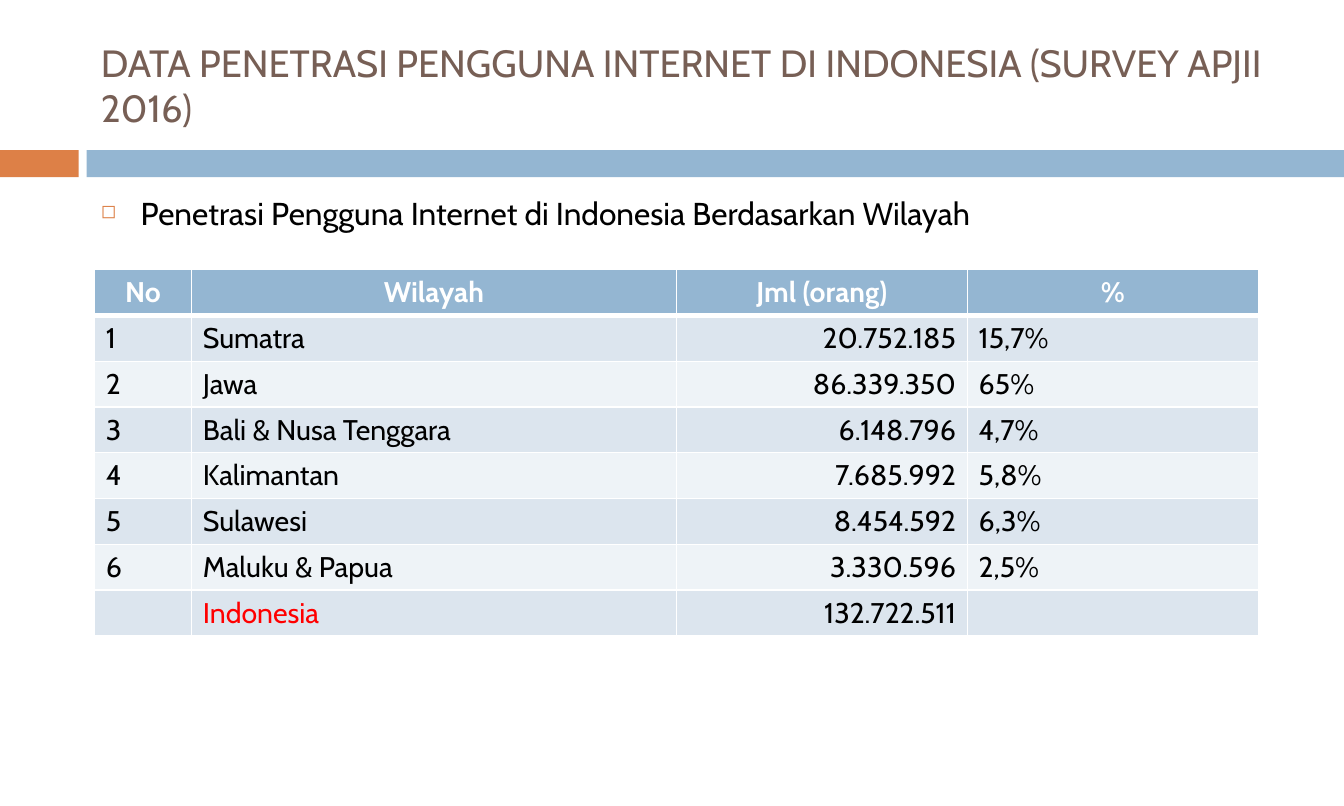
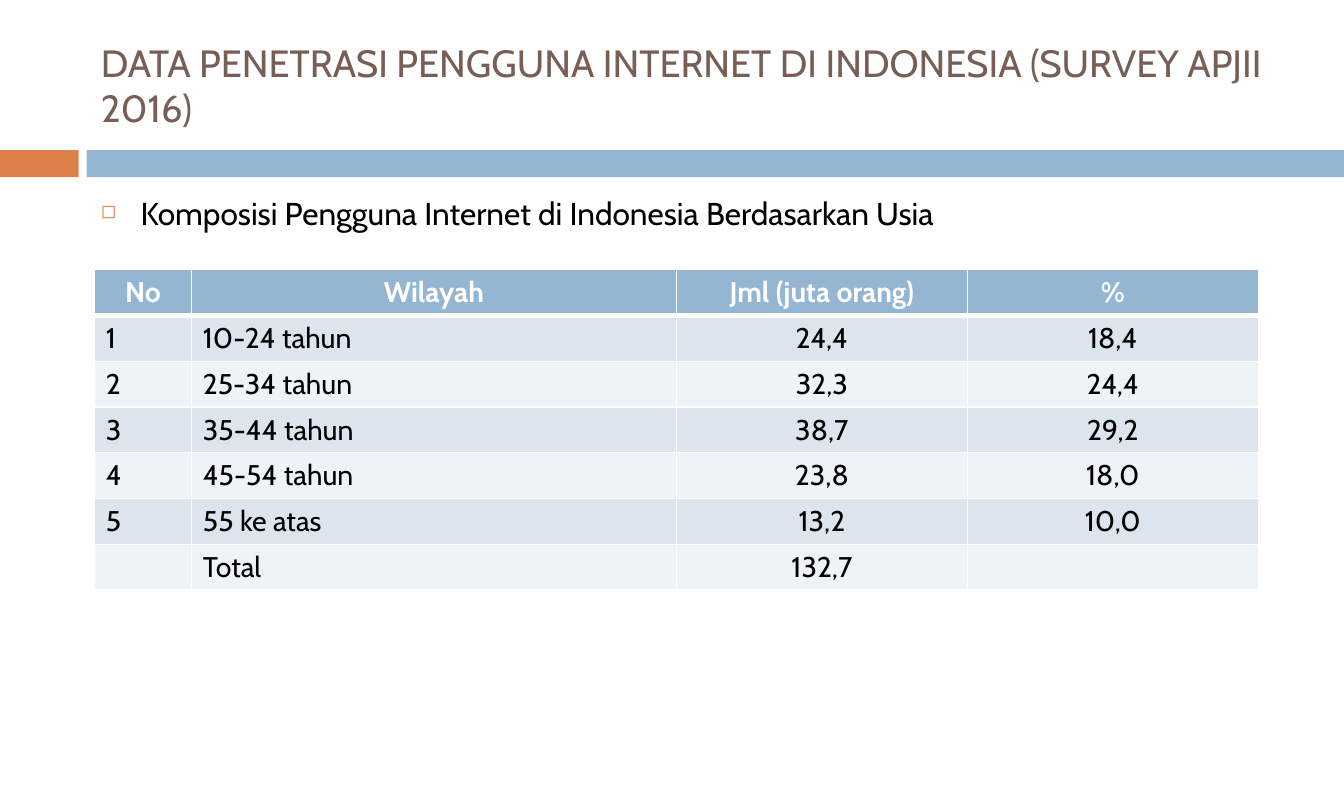
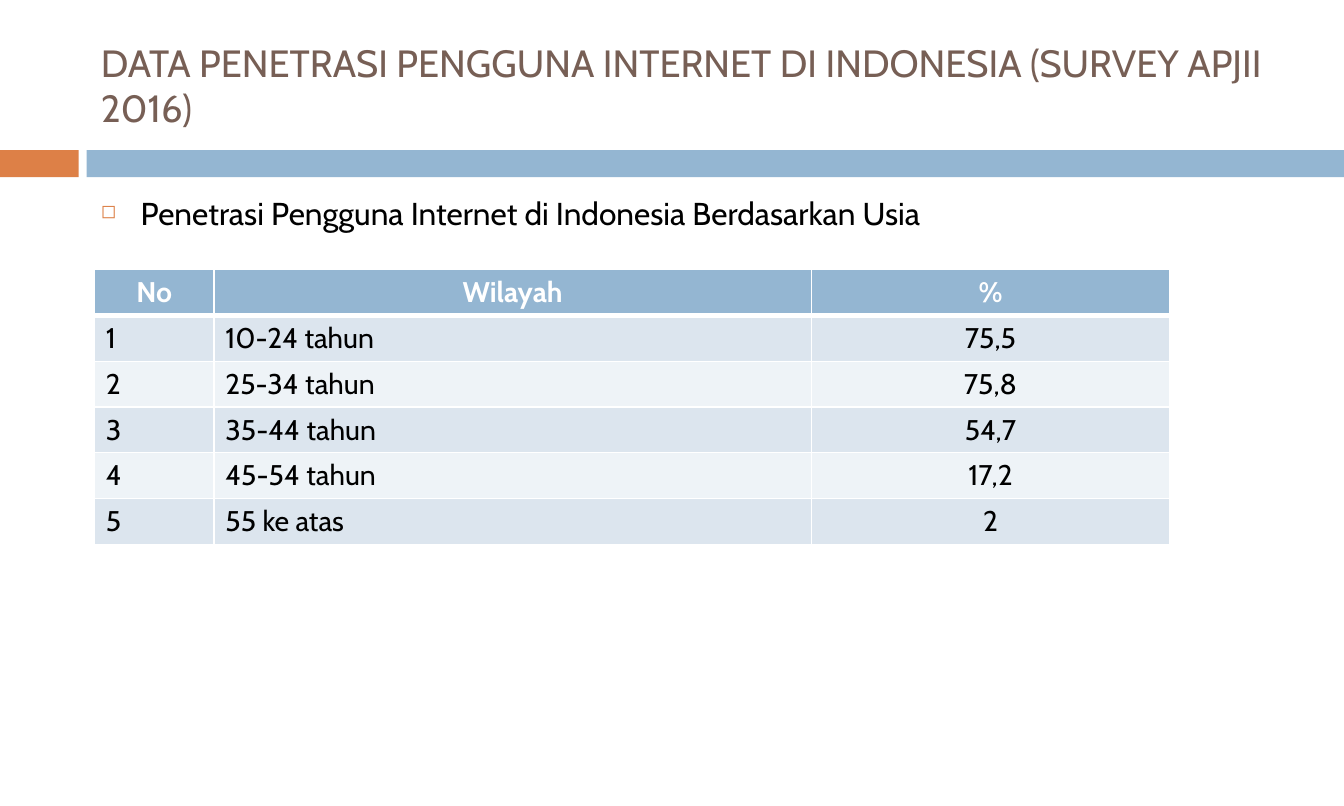
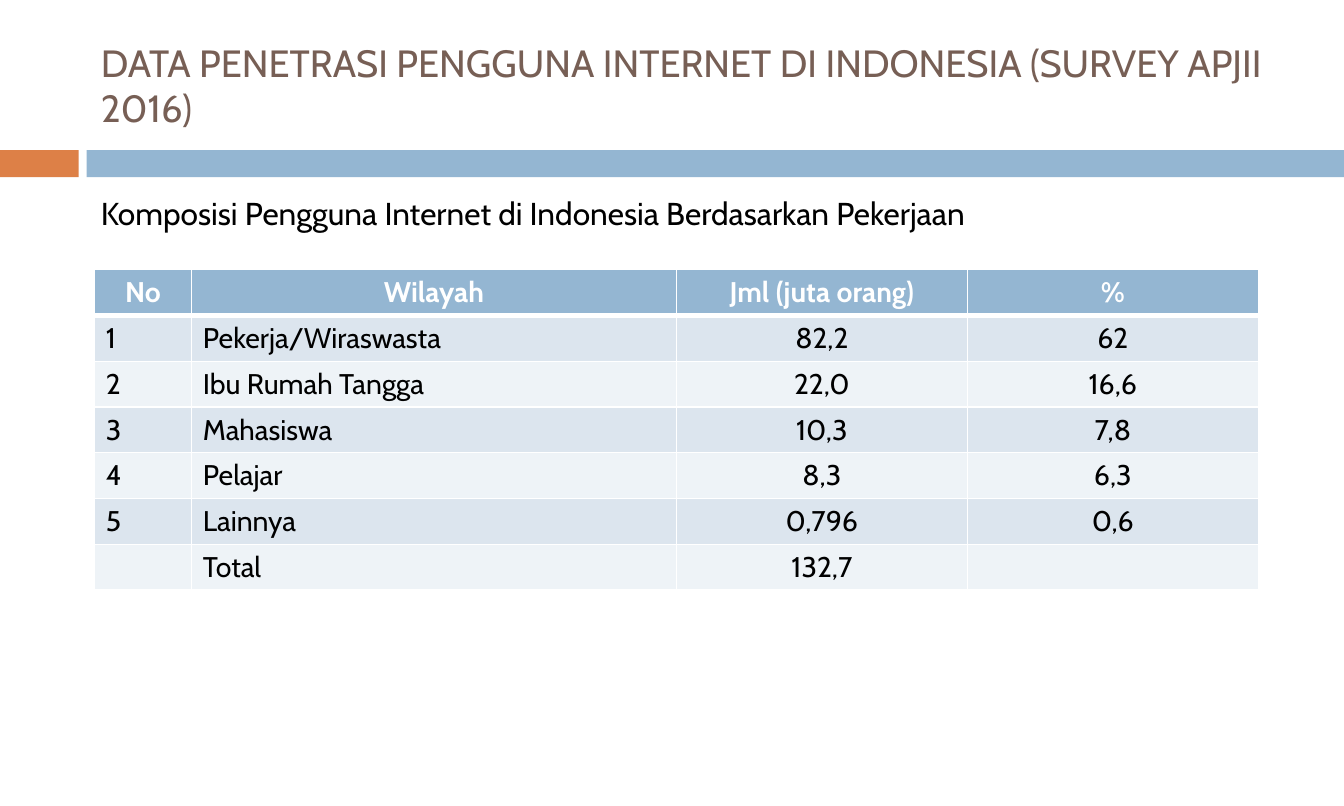
from lxml import etree
from pptx import Presentation
from pptx.dml.color import RGBColor
from pptx.enum.shapes import MSO_SHAPE
from pptx.enum.text import MSO_ANCHOR, PP_ALIGN
from pptx.oxml.ns import qn
from pptx.util import Pt

PX = 8000
SLIDE_WIDTH, SLIDE_HEIGHT = 1350, 810

RECTANGLE = MSO_SHAPE.RECTANGLE
MIDDLE, TOP = MSO_ANCHOR.MIDDLE, MSO_ANCHOR.TOP
ALIGNMENTS = {"l": PP_ALIGN.LEFT, "c": PP_ALIGN.CENTER, "r": PP_ALIGN.RIGHT}

FONT = "Cabin"
BROWN, ORANGE, BLUE = "775F55", "DD8047", "94B6D2"
BLACK, WHITE, RED = "000000", "FFFFFF", "FF0000"
STRIPES = ["DCE5EE", "EEF3F7"]

TITLE = "DATA PENETRASI PENGGUNA INTERNET DI INDONESIA (SURVEY APJII 2016)"
TITLE_PLACE = (90, 27, 1204, 117)
BODY_PLACE = (90, 189, 1204, 532)
BANDS = [(0, 79, ORANGE), (87, SLIDE_WIDTH - 87, BLUE)]
BAND_TOP, BAND_HEIGHT = 151, 27
BULLET_INDENT = 40

TABLE_LEFT, TABLE_TOP, ROW_HEIGHT = 95, 271, 46
COLUMN_PARTS = {"No": 1, "Wilayah": 5, "Jml (orang)": 3, "Jml (juta orang)": 3, "%": 3}
HIGHLIGHTS = {"Indonesia": RED}

PAGES = [
    {
        "heading": "Penetrasi Pengguna Internet di Indonesia Berdasarkan Wilayah",
        "bullet": True, "width": 1169, "align": "llrl",
        "rows": [
            ("No", "Wilayah", "Jml (orang)", "%"),
            ("1", "Sumatra", "20.752.185", "15,7%"),
            ("2", "Jawa", "86.339.350", "65%"),
            ("3", "Bali & Nusa Tenggara", "6.148.796", "4,7%"),
            ("4", "Kalimantan", "7.685.992", "5,8%"),
            ("5", "Sulawesi", "8.454.592", "6,3%"),
            ("6", "Maluku & Papua", "3.330.596", "2,5%"),
            ("", "Indonesia", "132.722.511", ""),
        ],
    },
    {
        "heading": "Komposisi Pengguna Internet di Indonesia Berdasarkan Usia",
        "bullet": True, "width": 1169, "align": "llcc",
        "rows": [
            ("No", "Wilayah", "Jml (juta orang)", "%"),
            ("1", "10-24 tahun", "24,4", "18,4"),
            ("2", "25-34 tahun", "32,3", "24,4"),
            ("3", "35-44 tahun", "38,7", "29,2"),
            ("4", "45-54 tahun", "23,8", "18,0"),
            ("5", "55 ke atas", "13,2", "10,0"),
            ("", "Total", "132,7", ""),
        ],
    },
    {
        "heading": "Penetrasi Pengguna Internet di Indonesia Berdasarkan Usia",
        "bullet": True, "width": 1080, "align": "llc",
        "rows": [
            ("No", "Wilayah", "%"),
            ("1", "10-24 tahun", "75,5"),
            ("2", "25-34 tahun", "75,8"),
            ("3", "35-44 tahun", "54,7"),
            ("4", "45-54 tahun", "17,2"),
            ("5", "55 ke atas", "2"),
        ],
    },
    {
        "heading": "Komposisi Pengguna Internet di Indonesia Berdasarkan Pekerjaan",
        "bullet": False, "width": 1169, "align": "llcc",
        "rows": [
            ("No", "Wilayah", "Jml (juta orang)", "%"),
            ("1", "Pekerja/Wiraswasta", "82,2", "62"),
            ("2", "Ibu Rumah Tangga", "22,0", "16,6"),
            ("3", "Mahasiswa", "10,3", "7,8"),
            ("4", "Pelajar", "8,3", "6,3"),
            ("5", "Lainnya", "0,796", "0,6"),
            ("", "Total", "132,7", ""),
        ],
    },
]


def px(*lengths):
    return [round(length * PX) for length in lengths]


def paint(fill, colour):
    fill.solid()
    fill.fore_color.rgb = RGBColor.from_string(colour)


def write(text_frame, text, size, colour, bold=False):
    """Set one paragraph of text, format it and return the paragraph."""
    text_frame.text = text
    paragraph = text_frame.paragraphs[0]
    for span in paragraph.runs:
        span.font.name = FONT
        span.font.size = Pt(size)
        span.font.bold = bold
        span.font.color.rgb = RGBColor.from_string(colour)
    return paragraph


def add_text(page, place, text, size, colour, anchor):
    text_frame = page.shapes.add_textbox(*px(*place)).text_frame
    text_frame.word_wrap = True
    text_frame.vertical_anchor = anchor
    return write(text_frame, text, size, colour)


def add_frame(page):
    """Draw the title and the bands that every slide shares."""
    for left, width, colour in BANDS:
        band = page.shapes.add_shape(RECTANGLE, *px(left, BAND_TOP, width, BAND_HEIGHT))
        band.shadow.inherit = False
        paint(band.fill, colour)
        band.line.fill.background()
    add_text(page, TITLE_PLACE, TITLE, 24, BROWN, MIDDLE)


def add_heading(page, text, bullet):
    paragraph = add_text(page, BODY_PLACE, text, 20, BLACK, TOP)
    paragraph.space_before = Pt(7)
    properties = paragraph._p.get_or_add_pPr()
    indent, = px(BULLET_INDENT)
    properties.set("marL", str(indent))
    properties.set("indent", str(-indent))
    if bullet:
        colour = etree.SubElement(properties, qn("a:buClr"))
        etree.SubElement(colour, qn("a:srgbClr"), val=ORANGE)
        etree.SubElement(properties, qn("a:buSzPct"), val="60000")
        etree.SubElement(properties, qn("a:buChar"), char="◻")
    else:
        etree.SubElement(properties, qn("a:buNone"))


def set_borders(cell, top, bottom):
    """Give a cell white borders; top and bottom are widths in points."""
    properties = cell._tc.get_or_add_tcPr()
    for side, width in (("L", 1), ("R", 1), ("T", top), ("B", bottom)):
        line = etree.SubElement(properties, qn("a:ln" + side), w=str(Pt(width)))
        fill = etree.SubElement(line, qn("a:solidFill"))
        etree.SubElement(fill, qn("a:srgbClr"), val=WHITE)


def add_data_table(page, rows, width, align):
    header = rows[0]
    place = px(TABLE_LEFT, TABLE_TOP, width, ROW_HEIGHT * len(rows))
    table = page.shapes.add_table(len(rows), len(header), *place).table
    parts = [COLUMN_PARTS[name] for name in header]
    for column, part in zip(table.columns, parts):
        column.width, = px(width * part / sum(parts))
    for index, values in enumerate(rows):
        table.rows[index].height, = px(ROW_HEIGHT)
        is_header = index == 0
        fill = BLUE if is_header else STRIPES[(index - 1) % 2]
        for position, value in enumerate(values):
            cell = table.cell(index, position)
            set_borders(cell, 3 if index == 1 else 1, 3 if is_header else 1)
            paint(cell.fill, fill)
            colour = WHITE if is_header else HIGHLIGHTS.get(value, BLACK)
            paragraph = write(cell.text_frame, value, 18, colour, is_header)
            paragraph.alignment = ALIGNMENTS["c" if is_header else align[position]]


def main():
    deck = Presentation()
    deck.slide_width, deck.slide_height = px(SLIDE_WIDTH, SLIDE_HEIGHT)
    blank = deck.slide_layouts[6]
    for content in PAGES:
        page = deck.slides.add_slide(blank)
        add_frame(page)
        add_heading(page, content["heading"], content["bullet"])
        add_data_table(page, content["rows"], content["width"], content["align"])
    deck.save("out.pptx")


if __name__ == "__main__":
    main()
